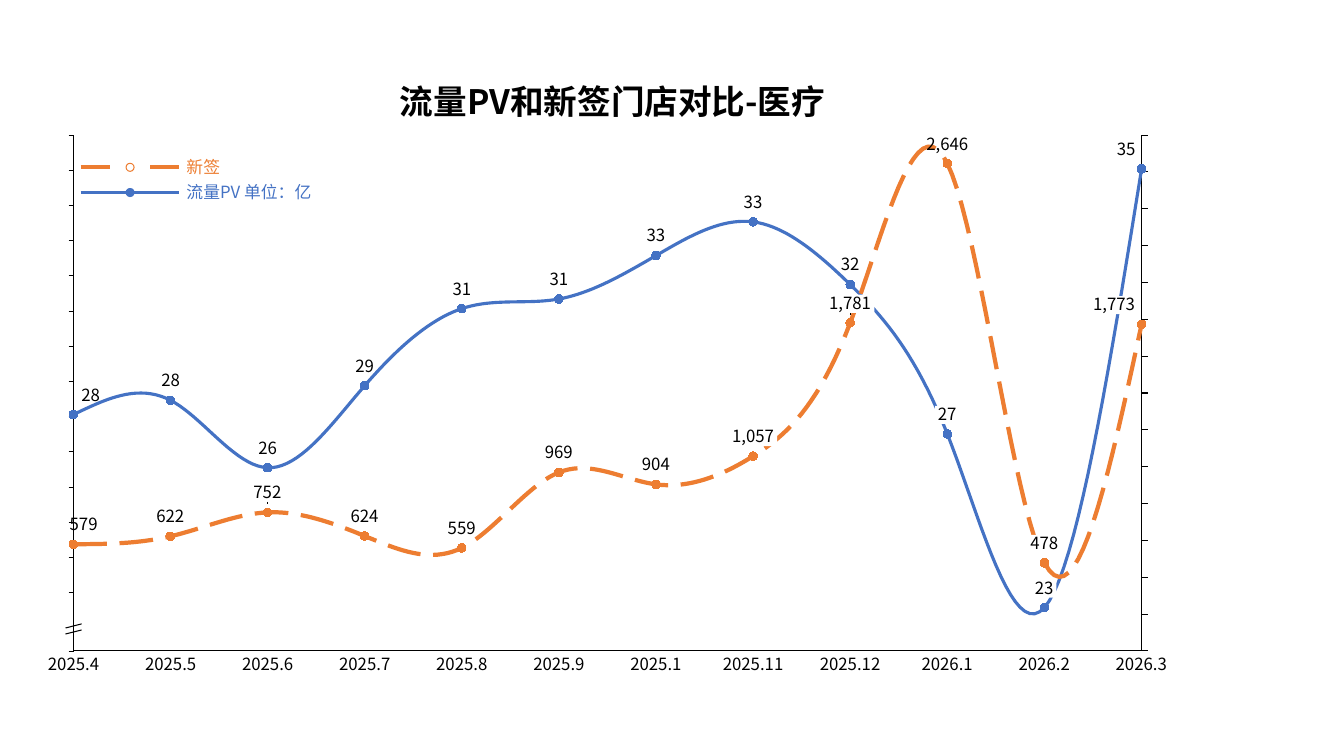
from copy import deepcopy

from lxml.etree import SubElement
from pptx import Presentation
from pptx.chart.axis import ValueAxis
from pptx.chart.data import CategoryChartData
from pptx.dml.color import RGBColor
from pptx.enum.chart import XL_CHART_TYPE, XL_MARKER_STYLE as Marker
from pptx.enum.chart import XL_LABEL_POSITION as LabelPos
from pptx.enum.chart import XL_TICK_LABEL_POSITION as TickLabel, XL_TICK_MARK as Tick
from pptx.enum.dml import MSO_LINE_DASH_STYLE as Dash
from pptx.enum.shapes import MSO_CONNECTOR, MSO_SHAPE as Shape
from pptx.enum.text import MSO_ANCHOR as Anchor, PP_ALIGN as Align
from pptx.oxml.ns import qn
from pptx.util import Inches, Pt

FONT = "Noto Sans CJK SC"
BLACK = RGBColor(0x00, 0x00, 0x00)
WHITE = RGBColor(0xFF, 0xFF, 0xFF)
BLUE = RGBColor(0x44, 0x72, 0xC4)
ORANGE = RGBColor(0xED, 0x7D, 0x31)

MONTHS = ["2025.4", "2025.5", "2025.6", "2025.7", "2025.8", "2025.9",
          "2025.1", "2025.11", "2025.12", "2026.1", "2026.2", "2026.3"]
TRAFFIC = [49, 52, 38, 55, 71, 73, 82, 89, 76, 45, 9, 100]
TRAFFIC_LABELS = [28, 28, 26, 29, 31, 31, 33, 33, 32, 27, 23, 35]
SIGNED = [579, 622, 752, 624, 559, 969, 904, 1057, 1781, 2646, 478, 1773]
TRAFFIC_MAX, SIGNED_MAX = 107, 2800
CHART_LABELLED = [1, 2, 3, 4, 5, 6, 9]

PLOT = (0.73, 1.34, 10.59, 5.12)  # left, top, width, height
LABEL_H = 0.18


def set_text(shape, text, color=BLACK, size=12, bold=False,
             align=Align.CENTER, anchor=Anchor.TOP, inset=0, wrap=False):
    frame = shape.text_frame
    frame.text = text
    frame.word_wrap = wrap
    frame.vertical_anchor = anchor
    frame.margin_left = frame.margin_right = Inches(inset)
    frame.margin_top = frame.margin_bottom = 0
    paragraph = frame.paragraphs[0]
    paragraph.alignment = align
    paragraph.line_spacing = 0.9
    run = paragraph.runs[0]
    run.font.name, run.font.size, run.font.bold = FONT, Pt(size), bold
    run.font.color.rgb = color
    SubElement(run.font._element, qn("a:ea"), typeface=FONT)


def add_line(slide, x1, y1, x2, y2, color=BLACK, width=0.75, dash=None):
    line = slide.shapes.add_connector(
        MSO_CONNECTOR.STRAIGHT, Inches(x1), Inches(y1), Inches(x2), Inches(y2))
    line.line.color.rgb = color
    line.line.width = Pt(width)
    if dash:
        line.line.dash_style = dash
    SubElement(line._element.spPr, qn("a:effectLst"))
    return line


def add_title(slide, left, top, width, height):
    title = slide.shapes.title
    title.left, title.top = Inches(left), Inches(top)
    title.width, title.height = Inches(width), Inches(height)
    set_text(title, "流量PV和新签门店对比-医疗", size=24, bold=True,
             anchor=Anchor.MIDDLE, wrap=True)


def add_left_ticks(slide, left, top, width, height):
    # One tick at the base, then an even run above the axis break
    step = (height - 0.58) / 13
    for y in [top + height] + [top + i * step for i in range(14)]:
        add_line(slide, left - 0.05, y, left, y)


def style_axis(axis):
    axis.has_major_gridlines = False
    axis.tick_label_position = TickLabel.NONE
    axis.major_tick_mark = axis.minor_tick_mark = Tick.NONE
    axis.format.line.color.rgb = BLACK
    axis.format.line.width = Pt(0.75)


def style_series(series, color, width):
    series.smooth = True
    series.format.line.color.rgb = color
    series.format.line.width = Pt(width)
    series.marker.style = Marker.CIRCLE
    series.marker.size = 6
    series.marker.format.fill.solid()
    series.marker.format.fill.fore_color.rgb = color
    series.marker.format.line.color.rgb = color


def split_to_right_axis(plot_area):
    """Move the second series to its own line plot on a right-hand axis."""
    traffic_plot = plot_area.find(qn("c:lineChart"))
    cat_axis, val_axis = plot_area.find(qn("c:catAx")), plot_area.find(qn("c:valAx"))
    signed_plot, right_cat, right_val = map(deepcopy, (traffic_plot, cat_axis, val_axis))
    traffic_plot.remove(traffic_plot.findall(qn("c:ser"))[1])
    signed_plot.remove(signed_plot.find(qn("c:ser")))
    traffic_plot.addnext(signed_plot)
    val_axis.addnext(right_val)
    right_val.addnext(right_cat)
    new_ids = {cat_axis.find(qn("c:axId")).get("val"): "5001",
               val_axis.find(qn("c:axId")).get("val"): "5002"}
    for part in (signed_plot, right_cat, right_val):
        for ref in part.iter(qn("c:axId"), qn("c:crossAx")):
            ref.set("val", new_ids[ref.get("val")])
    right_cat.find(qn("c:delete")).set("val", "1")
    right_val.find(qn("c:axPos")).set("val", "r")
    right_val.find(qn("c:crosses")).set("val", "max")
    right_axis = ValueAxis(right_val)
    right_axis.maximum_scale, right_axis.major_unit = SIGNED_MAX, 200
    right_axis.major_tick_mark = Tick.OUTSIDE


def set_plot_layout(plot_area, fractions):
    old_layout = plot_area.find(qn("c:layout"))
    if old_layout is not None:
        plot_area.remove(old_layout)
    layout = SubElement(plot_area, qn("c:layout"))
    plot_area.insert(0, layout)
    manual = SubElement(layout, qn("c:manualLayout"))
    settings = [("layoutTarget", "inner"), ("xMode", "edge"), ("yMode", "edge")]
    for name, value in settings + list(zip("xywh", fractions)):
        SubElement(manual, qn(f"c:{name}"), val=str(value))


def add_trend_chart(slide, left, top, width, height):
    data = CategoryChartData(number_format="#,##0")
    data.categories = [str(i + 1) for i in range(len(MONTHS))]
    data.add_series("Series 1", TRAFFIC)
    data.add_series("Series 2", SIGNED)
    chart = slide.shapes.add_chart(
        XL_CHART_TYPE.LINE_MARKERS, Inches(left), Inches(top),
        Inches(width), Inches(height), data).chart
    chart.has_legend = chart.has_title = False
    chart.font.name, chart.font.size = FONT, Pt(10)
    chart.font.color.rgb = BLACK
    chart.plots[0].vary_by_categories = False

    traffic, signed = chart.plots[0].series
    style_series(traffic, BLUE, 2.25)
    style_series(signed, ORANGE, 3)
    signed.format.line.dash_style = Dash.LONG_DASH
    signed.data_labels.show_value = False
    for i in CHART_LABELLED:
        label = signed.points[i].data_label
        label.font.name, label.font.size = FONT, Pt(12)
        label.font.color.rgb = BLACK
        label.position = LabelPos.ABOVE

    style_axis(chart.category_axis)
    style_axis(chart.value_axis)
    chart.value_axis.minimum_scale = 0
    chart.value_axis.maximum_scale = TRAFFIC_MAX
    # Points sit on the category ticks, so the lines reach both side axes
    val_axis = chart.value_axis._element
    between = val_axis.find(qn("c:crossBetween"))
    if between is None:
        between = SubElement(val_axis, qn("c:crossBetween"))
        val_axis.find(qn("c:crosses")).addnext(between)
    between.set("val", "midCat")

    plot_area = chart._chartSpace.chart.plotArea
    split_to_right_axis(plot_area)
    set_plot_layout(plot_area, (0.008, 0.051, 0.983, 0.898))


def add_axis_break(slide, left, top, width):
    for y in (top, top + 0.06):
        stroke = slide.shapes.build_freeform(Inches(left), Inches(y + 0.04))
        stroke.add_line_segments([(Inches(left + width), Inches(y))], close=False)
        mark = stroke.convert_to_shape()
        mark.shadow.inherit = False
        mark.fill.background()
        mark.line.color.rgb = BLACK
        mark.line.width = Pt(0.75)


def add_value_label(slide, center, point_y, text, masked):
    width = {2: 0.24, 3: 0.34, 5: 0.48}[len(text)]
    box = [Inches(v) for v in (center - width / 2, point_y - 0.28, width, LABEL_H)]
    if masked:
        label = slide.shapes.add_shape(Shape.RECTANGLE, *box)
        label.shadow.inherit = False
        label.fill.solid()
        label.fill.fore_color.rgb = WHITE
        label.line.fill.background()
    else:
        label = slide.shapes.add_textbox(*box)
    set_text(label, text, anchor=Anchor.BOTTOM, inset=0.02)
    return label


def add_labels(slide, left, top, width, height):
    step, base = width / (len(MONTHS) - 1), top + height
    # Labels at the side axes move inwards
    traffic_shift, signed_shift = {0: 0.17, 11: -0.15}, {0: 0.1, 11: -0.27}
    add_line(slide, left + 2 * step, 4.98, left + 2 * step, 5, width=0.5)
    for i, month in enumerate(MONTHS):
        x = left + i * step
        # Month under the axis
        month_w = 0.54 if len(month) == 6 else 0.64
        month_box = slide.shapes.add_textbox(
            Inches(x - month_w / 2), Inches(base + 0.05), Inches(month_w), Inches(LABEL_H))
        set_text(month_box, month)
        # Values above the points
        add_value_label(slide, x + traffic_shift.get(i, 0),
                        base - height * TRAFFIC[i] / TRAFFIC_MAX,
                        str(TRAFFIC_LABELS[i]), masked=i in (9, 10))
        if i not in CHART_LABELLED:
            y = base - height * SIGNED[i] / SIGNED_MAX
            label = add_value_label(slide, x + signed_shift.get(i, 0), y,
                                    f"{SIGNED[i]:,}", masked=i > 0)
            if i == 8:
                leader = add_line(slide, x, y - 0.1, x, y - 0.08, width=0.5)
                leader.begin_connect(label, 2)


def add_legend(slide, left, top, width):
    signed_y, traffic_y = top + 0.08, top + 0.33
    for x in (left, left + width - 0.29):
        add_line(slide, x, signed_y, x + 0.29, signed_y, ORANGE, 3, Dash.LONG_DASH)
    add_line(slide, left, traffic_y, left + width, traffic_y, BLUE, 2.25)
    entries = [(signed_y, "新签", 0.5, ORANGE, WHITE),
               (traffic_y, "流量PV 单位：亿", 1.6, BLUE, BLUE)]
    for y, name, name_w, color, fill in entries:
        dot = slide.shapes.add_shape(Shape.OVAL, Inches(left + width / 2 - 0.04),
                                     Inches(y - 0.04), Inches(0.08), Inches(0.08))
        dot.shadow.inherit = False
        dot.fill.solid()
        dot.fill.fore_color.rgb = fill
        dot.line.color.rgb = color
        dot.line.width = Pt(0.75)
        entry = slide.shapes.add_textbox(Inches(left + 1.05), Inches(y - 0.08),
                                         Inches(name_w), Inches(LABEL_H))
        set_text(entry, name, color, align=Align.LEFT, anchor=Anchor.MIDDLE, wrap=True)


def main():
    deck = Presentation()
    deck.slide_width, deck.slide_height = Inches(13.33), Inches(7.5)
    slide = deck.slides.add_slide(deck.slide_layouts[5])
    add_title(slide, 2.96, 0.79, 6.23, 0.47)
    add_left_ticks(slide, *PLOT)
    add_trend_chart(slide, 0.64, 1.05, 10.78, 5.7)
    add_axis_break(slide, 0.65, 6.19, 0.16)
    add_labels(slide, *PLOT)
    add_legend(slide, 0.8, 1.58, 0.98)
    deck.save("out.pptx")


if __name__ == "__main__":
    main()
